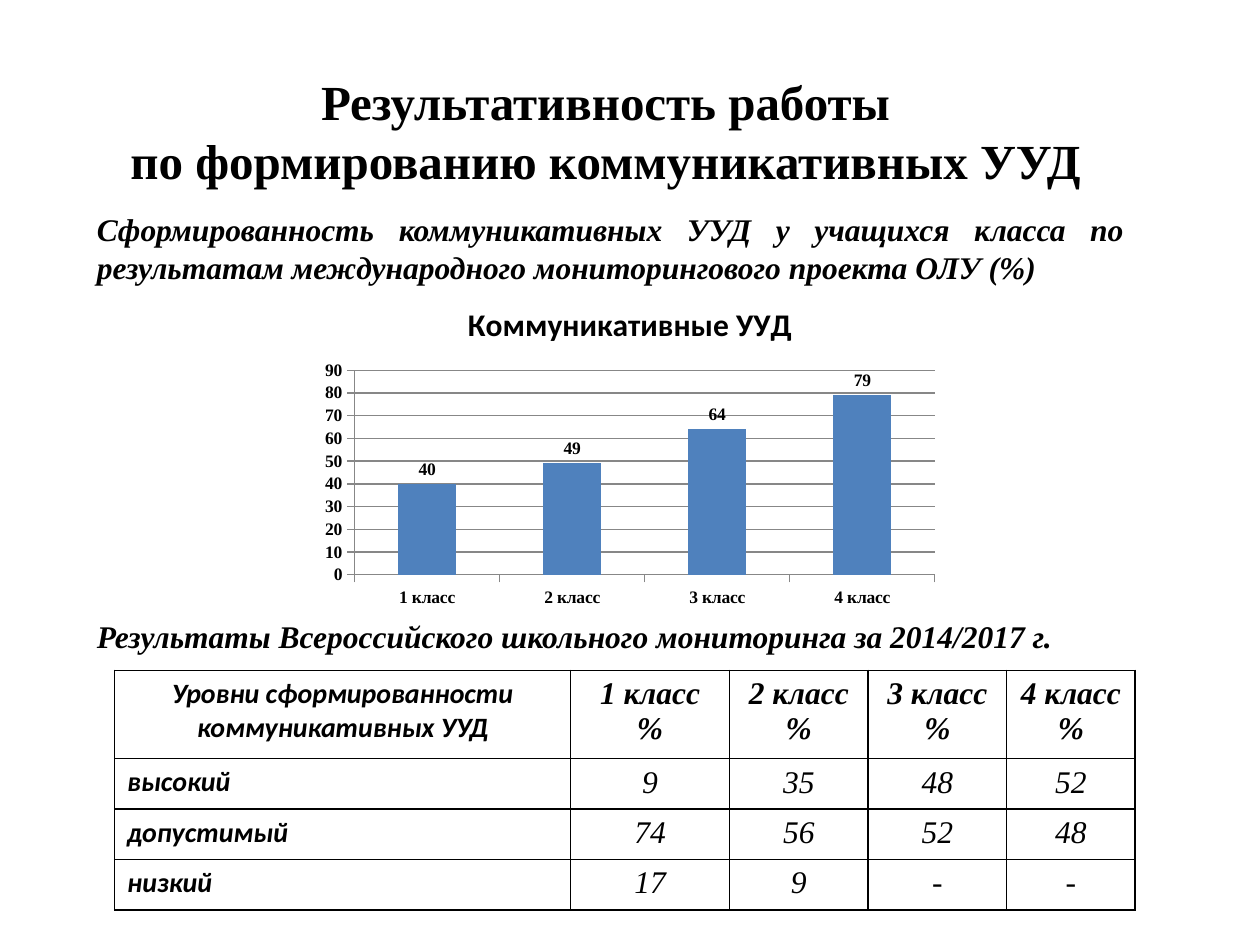
import dataclasses

import pptx
import pptx.chart.data
import pptx.dml.color
import pptx.enum.chart
import pptx.enum.text
import pptx.oxml
import pptx.oxml.ns
import pptx.util

Inches = pptx.util.Inches
Pt = pptx.util.Pt
Align = pptx.enum.text.PP_ALIGN
Anchor = pptx.enum.text.MSO_ANCHOR

SERIF = "Times New Roman"
SANS = "Calibri"
BLACK = "000000"
BLUE = "4F81BD"
GREY = "878787"
GRADES = [f"{n} класс" for n in range(1, 5)]


@dataclasses.dataclass
class Style:
    size: float
    face: str = SERIF
    bold: bool = True
    italic: bool = False
    align: Align = Align.CENTER


@dataclasses.dataclass
class Note:
    top: float
    width: float
    height: float
    text: str


TITLE = Style(28)
NOTE = Style(18, italic=True, align=Align.JUSTIFY)
HEAD = Style(16, SANS, italic=True)
GRADE = Style(18, italic=True)
LEVEL = Style(16, SANS, italic=True, align=Align.LEFT)
VALUE = Style(18, bold=False, italic=True)

NOTES = [
    Note(1.62, 8.35, 0.76, "Сформированность коммуникативных УУД у учащихся класса "
         "по результатам международного мониторингового проекта ОЛУ (%)"),
    Note(4.85, 8.82, 0.4, "Результаты Всероссийского школьного мониторинга за 2014/2017 г."),
]
ROWS = [
    ["Уровни сформированности\nкоммуникативных УУД"] + [f"{g} %" for g in GRADES],
    ["высокий", "9", "35", "48", "52"],
    ["допустимый", "74", "56", "52", "48"],
    ["низкий", "17", "9", "-", "-"],
]
WIDTHS = [3.62, 1.26, 1.1, 1.1, 1.02]
HEIGHTS = [0.7, 0.4, 0.4, 0.4]


def color(code: str):
    return pptx.dml.color.RGBColor.from_string(code)


def set_font(font, style: Style) -> None:
    font.size = Pt(style.size)
    font.name = style.face
    font.bold = style.bold
    font.italic = style.italic
    font.color.rgb = color(BLACK)


def write(frame, text: str, style: Style) -> None:
    frame.text = text
    for para in frame.paragraphs:
        para.alignment = style.align
        for run in para.runs:
            set_font(run.font, style)


def add_title(slide) -> None:
    title = slide.shapes.title
    title.left, title.top = Inches(0.63), Inches(0.52)
    title.width, title.height = Inches(8.35), Inches(1.05)
    frame = title.text_frame
    write(frame, "Результативность работы\nпо формированию коммуникативных УУД", TITLE)
    frame.vertical_anchor = Anchor.TOP
    frame.auto_size = pptx.enum.text.MSO_AUTO_SIZE.NONE


def add_note(slide, note: Note) -> None:
    box = slide.shapes.add_textbox(Inches(0.67), Inches(note.top),
                                   Inches(note.width), Inches(note.height))
    box.text_frame.word_wrap = True
    write(box.text_frame, note.text, NOTE)


def add_chart(slide) -> None:
    data = pptx.chart.data.CategoryChartData()
    data.categories = GRADES
    data.add_series("Коммуникативные УУД", [40, 49, 64, 79])
    chart = slide.shapes.add_chart(
        pptx.enum.chart.XL_CHART_TYPE.COLUMN_CLUSTERED,
        Inches(2.48), Inches(2.25), Inches(5.04), Inches(2.62), data).chart
    set_font(chart.font, Style(10, SANS, bold=False))
    chart.has_legend = False
    chart.has_title = True
    write(chart.chart_title.text_frame, "Коммуникативные УУД", Style(18, SANS))

    for axis in (chart.category_axis, chart.value_axis):
        set_font(axis.tick_labels.font, Style(10))
        axis.major_tick_mark = pptx.enum.chart.XL_TICK_MARK.OUTSIDE
        axis.format.line.color.rgb = color(GREY)
    scale = chart.value_axis
    scale.minimum_scale, scale.maximum_scale, scale.major_unit = 0, 90, 10
    scale.major_gridlines.format.line.color.rgb = color(GREY)

    plot = chart.plots[0]
    plot.vary_by_categories = False
    plot.gap_width = 150
    fill = plot.series[0].format.fill
    fill.solid()
    fill.fore_color.rgb = color(BLUE)
    plot.has_data_labels = True
    labels = plot.data_labels
    labels.show_value = True
    labels.position = pptx.enum.chart.XL_LABEL_POSITION.OUTSIDE_END
    set_font(labels.font, Style(10))


def add_edges(cell) -> None:
    props = cell._tc.get_or_add_tcPr()
    for side in "LRTB":
        props.append(pptx.oxml.parse_xml(
            f'<a:ln{side} {pptx.oxml.ns.nsdecls("a")} w="{Pt(1)}"><a:solidFill>'
            f'<a:srgbClr val="{BLACK}"/></a:solidFill></a:ln{side}>'))


def pick(row: int, col: int) -> Style:
    """Return the style for a table cell."""
    if row == 0:
        return GRADE if col else HEAD
    return VALUE if col else LEVEL


def add_table(slide) -> None:
    table = slide.shapes.add_table(
        len(ROWS), len(WIDTHS), Inches(0.91), Inches(5.32),
        Inches(sum(WIDTHS)), Inches(sum(HEIGHTS))).table
    table.first_row = table.horz_banding = False
    for col, width in zip(table.columns, WIDTHS):
        col.width = Inches(width)
    for row, height in zip(table.rows, HEIGHTS):
        row.height = Inches(height)
    for r, texts in enumerate(ROWS):
        for c, text in enumerate(texts):
            cell = table.cell(r, c)
            write(cell.text_frame, text, pick(r, c))
            add_edges(cell)
            cell.fill.background()


def main() -> None:
    deck = pptx.Presentation()
    deck.slide_width, deck.slide_height = Inches(10), Inches(7.5)
    slide = deck.slides.add_slide(deck.slide_layouts.get_by_name("Title Only"))
    add_title(slide)
    add_chart(slide)
    for note in NOTES:
        add_note(slide, note)
    add_table(slide)
    deck.save("out.pptx")


if __name__ == "__main__":
    main()
